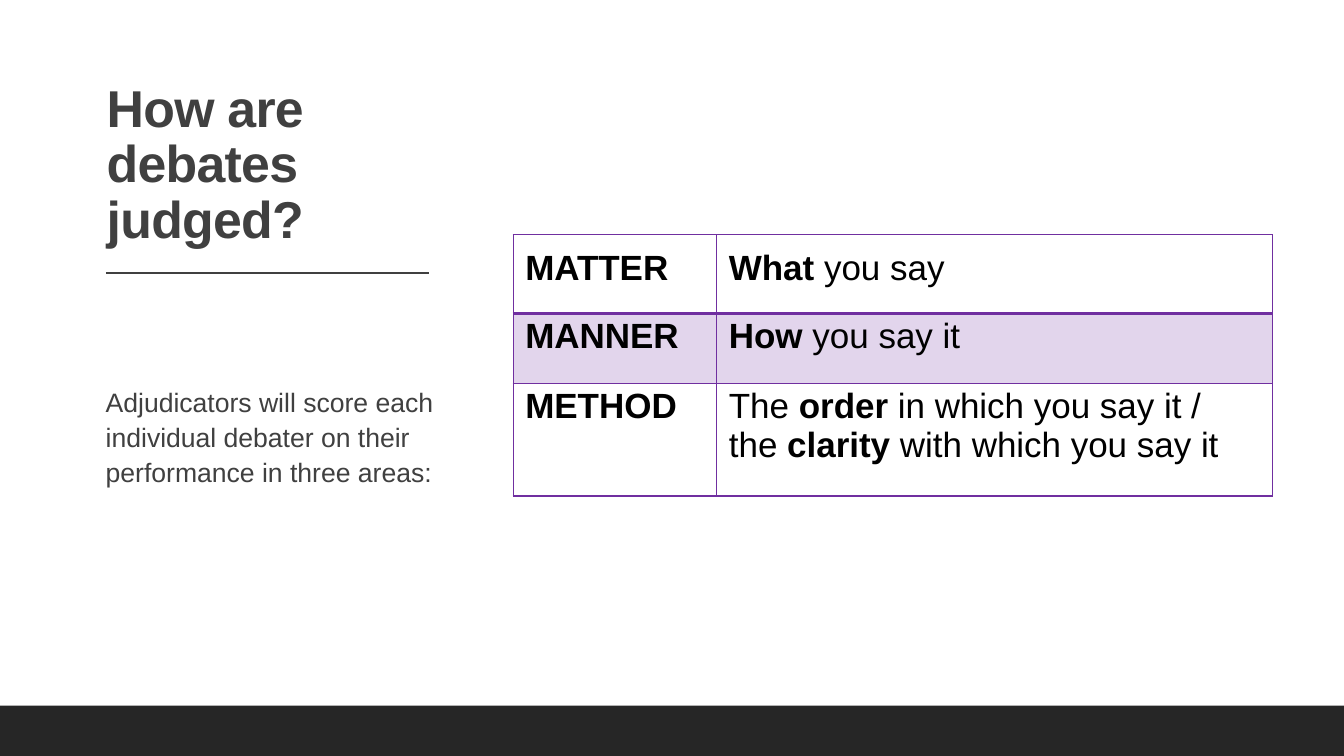
import pptx
import pptx.util
import pptx.oxml
import pptx.dml.color
import pptx.enum.text
import pptx.enum.shapes
from lxml import etree

TITLE = "How are debates judged?"
BODY = "Adjudicators will score each individual debater on their performance in three areas:"
ROWS = [
    (0.78, [("MATTER", True)], [("What ", True), ("you say", False)]),
    (0.67, [("MANNER", True)], [("How", True), (" you say it", False)]),
    (1.06, [("METHOD", True)], [
        ("The ", False), ("order", True), (" in which you say it / the ", False),
        ("clarity", True), (" with which you say it", False)]),
]
COLS = [2.02, 5.51]
HUES = {"text": "404040", "bar": "262626", "edge": "702FA0", "cell": "000000", "back": "FFFFFF"}
FONT = "Arial"
Inches = pptx.util.Inches
Pt = pptx.util.Pt
ANCHOR = pptx.enum.text.MSO_ANCHOR


def hue(name):
    """Return the named colour."""
    return pptx.dml.color.RGBColor.from_string(HUES[name])


def child(node, tag, **attrs):
    """Append a drawing element and return it."""
    return etree.SubElement(node, pptx.oxml.ns.qn(tag), attrs)


def inset(box, left, top, right, bottom):
    """Set the four margins of a frame or cell."""
    box.margin_left, box.margin_top = Inches(left), Inches(top)
    box.margin_right, box.margin_bottom = Inches(right), Inches(bottom)


def add_run(para, text, size, bold, name):
    """Add one styled run."""
    run = para.add_run()
    run.text = text
    font = run.font
    font.name, font.size, font.bold = FONT, Pt(size), bold
    font.color.rgb = hue(name)
    return run


def add_text(slide, spot, text, size, bold, lead, anchor):
    """Add a wrapped text box with one paragraph."""
    frame = slide.shapes.add_textbox(*map(Inches, spot)).text_frame
    frame.word_wrap = True
    frame.vertical_anchor = anchor
    inset(frame, 0.1, 0.05, 0, 0.05)
    para = frame.paragraphs[0]
    para.line_spacing = lead
    return add_run(para, text, size, bold, "text")


def add_edges(cell, first):
    """Draw the four borders of a cell."""
    props = cell._tc.get_or_add_tcPr()
    for side in "LRTB":
        width = Pt(2 if first and side == "B" else 1)
        line = child(props, f"a:ln{side}", w=str(width))
        child(child(line, "a:solidFill"), "a:srgbClr", val=HUES["edge"])


def add_grid(slide):
    """Add the table of judging areas."""
    high = sum(row[0] for row in ROWS)
    spot = map(Inches, (5.09, 2.33, sum(COLS), high))
    table = slide.shapes.add_table(len(ROWS), len(COLS), *spot).table
    table.first_row = table.horz_banding = False
    for col, width in zip(table.columns, COLS):
        col.width = Inches(width)
    for r, (height, *texts) in enumerate(ROWS):
        table.rows[r].height = Inches(height)
        for c, runs in enumerate(texts):
            cell = table.cell(r, c)
            inset(cell, 0.12, 0.03, 0.16, 0.25)
            cell.vertical_anchor = ANCHOR.BOTTOM if r == 0 else ANCHOR.TOP
            add_edges(cell, r == 0)
            if r % 2:
                cell.fill.solid()
                cell.fill.fore_color.rgb = hue("edge")
                tint = cell._tc.tcPr.find(pptx.oxml.ns.qn("a:solidFill"))[0]
                child(tint, "a:alpha", val="20000")
            else:
                cell.fill.background()
            for text, bold in runs:
                add_run(cell.text_frame.paragraphs[0], text, 25, bold, "cell")


def main():
    """Build the slide and save it."""
    deck = pptx.Presentation()
    deck.slide_width, deck.slide_height = Inches(13.33), Inches(7.5)
    slide = deck.slides.add_slide(deck.slide_layouts[6])
    slide.background.fill.solid()
    slide.background.fill.fore_color.rgb = hue("back")

    head = add_text(slide, (0.96, 0.7, 3.48, 1.83), TITLE, 37, True, 0.9, ANCHOR.BOTTOM)
    head._r.get_or_add_rPr().set("spc", "-50")
    rule = slide.shapes.add_connector(
        pptx.enum.shapes.MSO_CONNECTOR.STRAIGHT, *map(Inches, (1.05, 2.71, 4.25, 2.71)))
    rule.line.color.rgb, rule.line.width = hue("text"), Pt(1)
    child(rule._element.spPr, "a:effectLst")
    add_text(slide, (0.95, 3.75, 3.48, 2.67), BODY, 19, False, 1.1, ANCHOR.TOP)

    bar = slide.shapes.add_shape(
        pptx.enum.shapes.MSO_SHAPE.RECTANGLE, *map(Inches, (0, 7, 13.33, 0.5)))
    bar.shadow.inherit = False
    bar.fill.solid()
    bar.fill.fore_color.rgb = hue("bar")
    bar.line.fill.background()
    add_grid(slide)
    deck.save("out.pptx")


if __name__ == "__main__":
    main()
